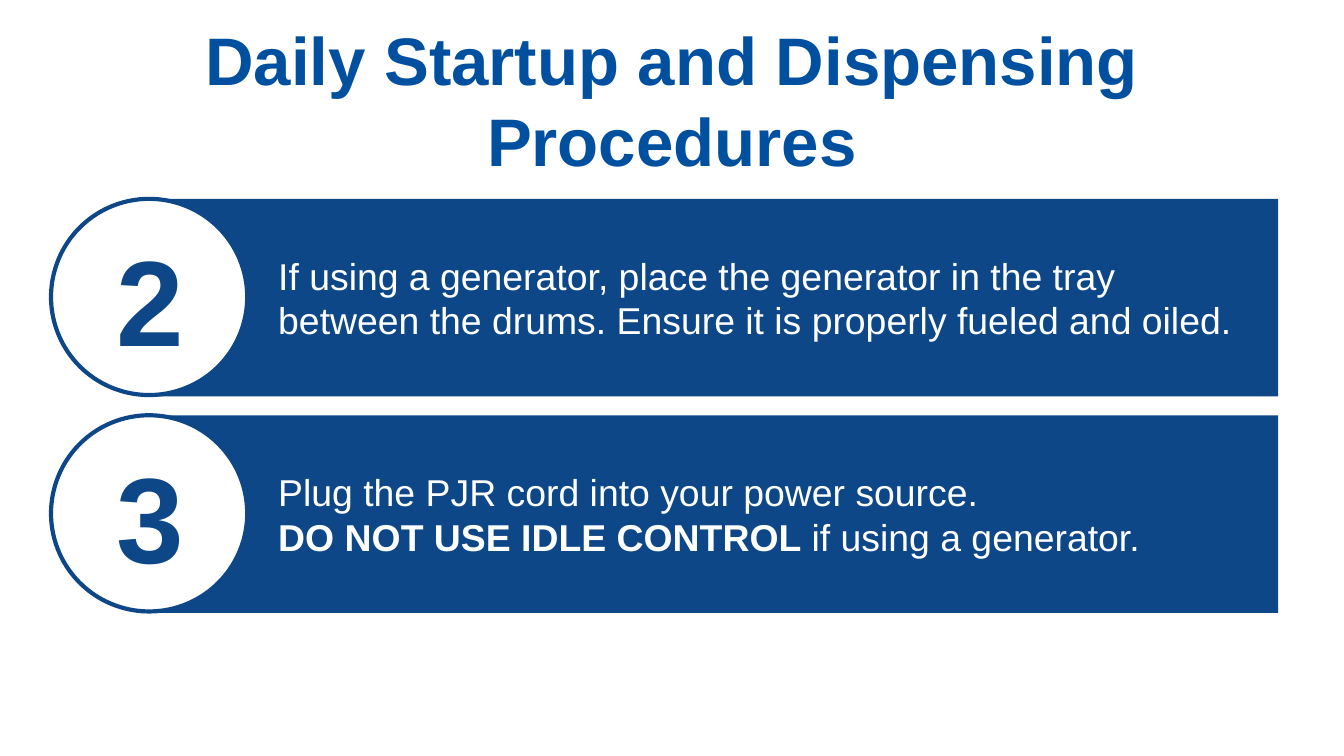
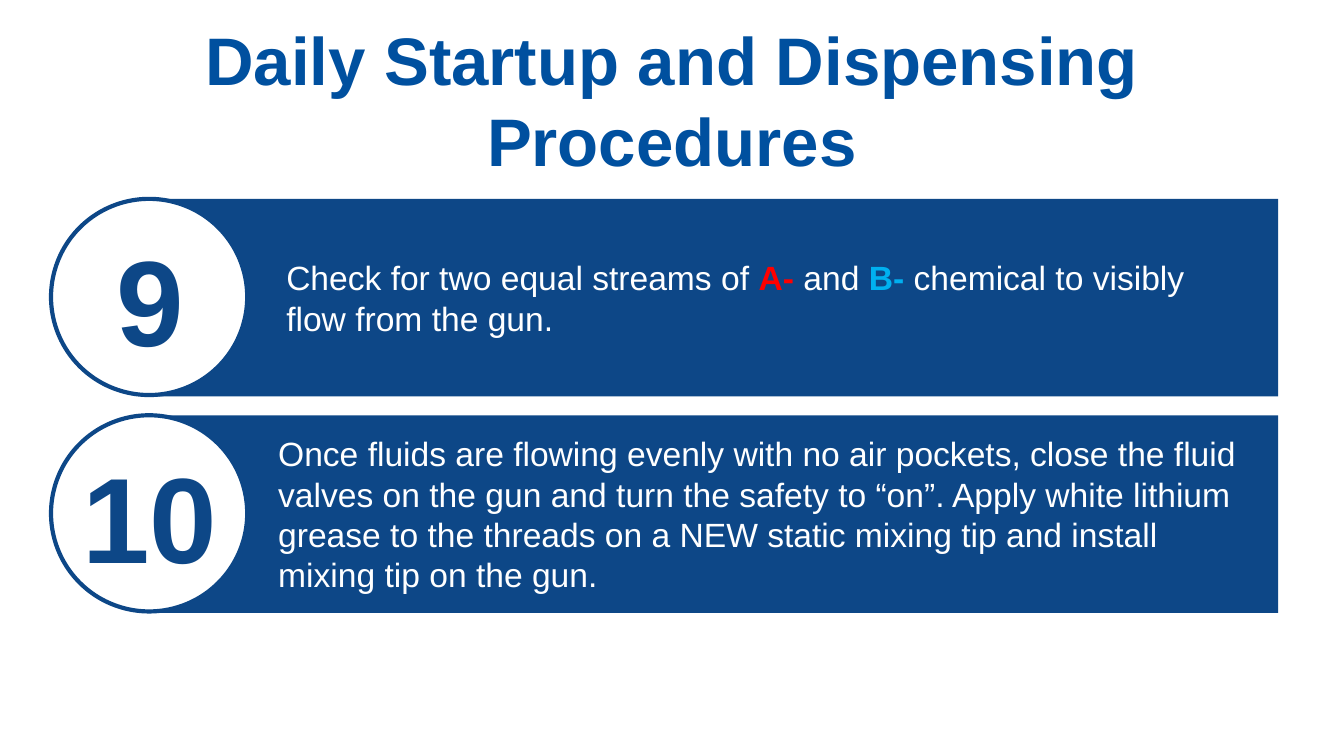
"""Build the daily startup and dispensing procedure slides."""
from dataclasses import dataclass

from pptx import Presentation
from pptx.dml.color import RGBColor
from pptx.enum.shapes import MSO_SHAPE
from pptx.enum.text import MSO_ANCHOR, MSO_AUTO_SIZE, PP_ALIGN
from pptx.shapes.autoshape import Shape
from pptx.shapes.group import GroupShape
from pptx.slide import Slide
from pptx.text.text import TextFrame
from pptx.util import Inches, Pt

COLORS = {
    "title": "00509F",
    "band": "0D4787",
    "white": "FFFFFF",
    "a_side": "FF0000",
    "b_side": "00B0F0",
}
FONT = "Arial"
TITLE = "Daily Startup and Dispensing Procedures"
SLIDE_WIDTH = 10
FIRST_TOP = 1.48
STEP_PITCH = 1.61
BAND_HEIGHT = 1.47
CIRCLE_SIZE = 1.46


@dataclass(frozen=True)
class Piece:
    text: str
    bold: bool = False
    color: str = "white"


@dataclass(frozen=True)
class Step:
    number: int
    lines: list[list[Piece]]
    size: int
    inset: float = 0.5
    indent: float = 0.44


SLIDES = [
    [
        Step(2, [[Piece("If using a generator, place the generator in the tray between "
                        "the drums. Ensure it is properly fueled and oiled.")]], 20),
        Step(3, [
            [Piece("Plug the PJR cord into your power source.")],
            [Piece("DO NOT USE IDLE CONTROL ", bold=True), Piece("if using a generator.")],
        ], 20),
    ],
    [
        Step(9, [[
            Piece("Check for two equal streams of "),
            Piece("A-", True, "a_side"),
            Piece(" and "),
            Piece("B-", True, "b_side"),
            Piece(" chemical to visibly flow from the gun."),
        ]], 18, inset=1, indent=0),
        Step(10, [[Piece("Once fluids are flowing evenly with no air pockets, close the fluid "
                         "valves on the gun and turn the safety to “on”. Apply white lithium "
                         "grease to the threads on a NEW static mixing tip and install "
                         "mixing tip on the gun.")]], 18),
    ],
]


def rgb(name: str) -> RGBColor:
    return RGBColor.from_string(COLORS[name])


def write_heading(frame: TextFrame, text: str, size: int, color: str) -> None:
    frame.word_wrap = True
    paragraph = frame.paragraphs[0]
    paragraph.text = text
    paragraph.alignment = PP_ALIGN.CENTER
    paragraph.font.name = FONT
    paragraph.font.size = Pt(size)
    paragraph.font.bold = True
    paragraph.font.color.rgb = rgb(color)


def write_step(frame: TextFrame, step: Step) -> None:
    frame.word_wrap = True
    frame.vertical_anchor = MSO_ANCHOR.MIDDLE
    frame.margin_left = Inches(step.inset)
    frame.margin_right = Inches(0.3)
    for index, line in enumerate(step.lines):
        paragraph = frame.add_paragraph() if index else frame.paragraphs[0]
        paragraph.alignment = PP_ALIGN.LEFT
        if step.indent:
            paragraph.level = 1
            properties = paragraph._p.get_or_add_pPr()
            properties.set("marL", str(Inches(step.indent)))
            properties.set("indent", "0")
        paragraph.font.name = FONT
        paragraph.font.size = Pt(step.size)
        paragraph.font.color.rgb = rgb("white")
        for piece in line:
            run = paragraph.add_run()
            run.text = piece.text
            run.font.color.rgb = rgb(piece.color)
            if piece.bold:
                run.font.bold = True


def add_filled(group: GroupShape, kind: MSO_SHAPE, left: float, top: float,
               width: float, height: float, fill: str) -> Shape:
    shape = group.shapes.add_shape(kind, Inches(left), Inches(top), Inches(width), Inches(height))
    shape.shadow.inherit = False
    shape.fill.solid()
    shape.fill.fore_color.rgb = rgb(fill)
    shape.line.fill.background()
    return shape


def add_step(slide: Slide, step: Step, top: float) -> None:
    group = slide.shapes.add_group_shape()
    band = add_filled(group, MSO_SHAPE.RECTANGLE, 1.13, top, 8.38, BAND_HEIGHT, "band")
    write_step(band.text_frame, step)
    circle = add_filled(group, MSO_SHAPE.OVAL, 0.38, top, CIRCLE_SIZE, CIRCLE_SIZE, "white")
    circle.line.color.rgb = rgb("band")
    circle.line.width = Pt(2.25)
    number = group.shapes.add_textbox(Inches(0.39), Inches(top + 0.15), Inches(1.45), Inches(1.19))
    write_heading(number.text_frame, str(step.number), 65, "band")
    number.text_frame.auto_size = MSO_AUTO_SIZE.SHAPE_TO_FIT_TEXT


def add_title(slide: Slide) -> None:
    title = slide.shapes.add_textbox(Inches(0), Inches(0.27), Inches(SLIDE_WIDTH), Inches(0.94))
    title.text_frame.vertical_anchor = MSO_ANCHOR.MIDDLE
    write_heading(title.text_frame, TITLE, 36, "title")


def main() -> None:
    presentation = Presentation()
    presentation.slide_width = Inches(SLIDE_WIDTH)
    presentation.slide_height = Inches(SLIDE_WIDTH * 9 / 16)
    for steps in SLIDES:
        slide = presentation.slides.add_slide(presentation.slide_layouts[6])
        add_title(slide)
        for index, step in enumerate(steps):
            add_step(slide, step, FIRST_TOP + index * STEP_PITCH)
    presentation.save("out.pptx")


if __name__ == "__main__":
    main()
